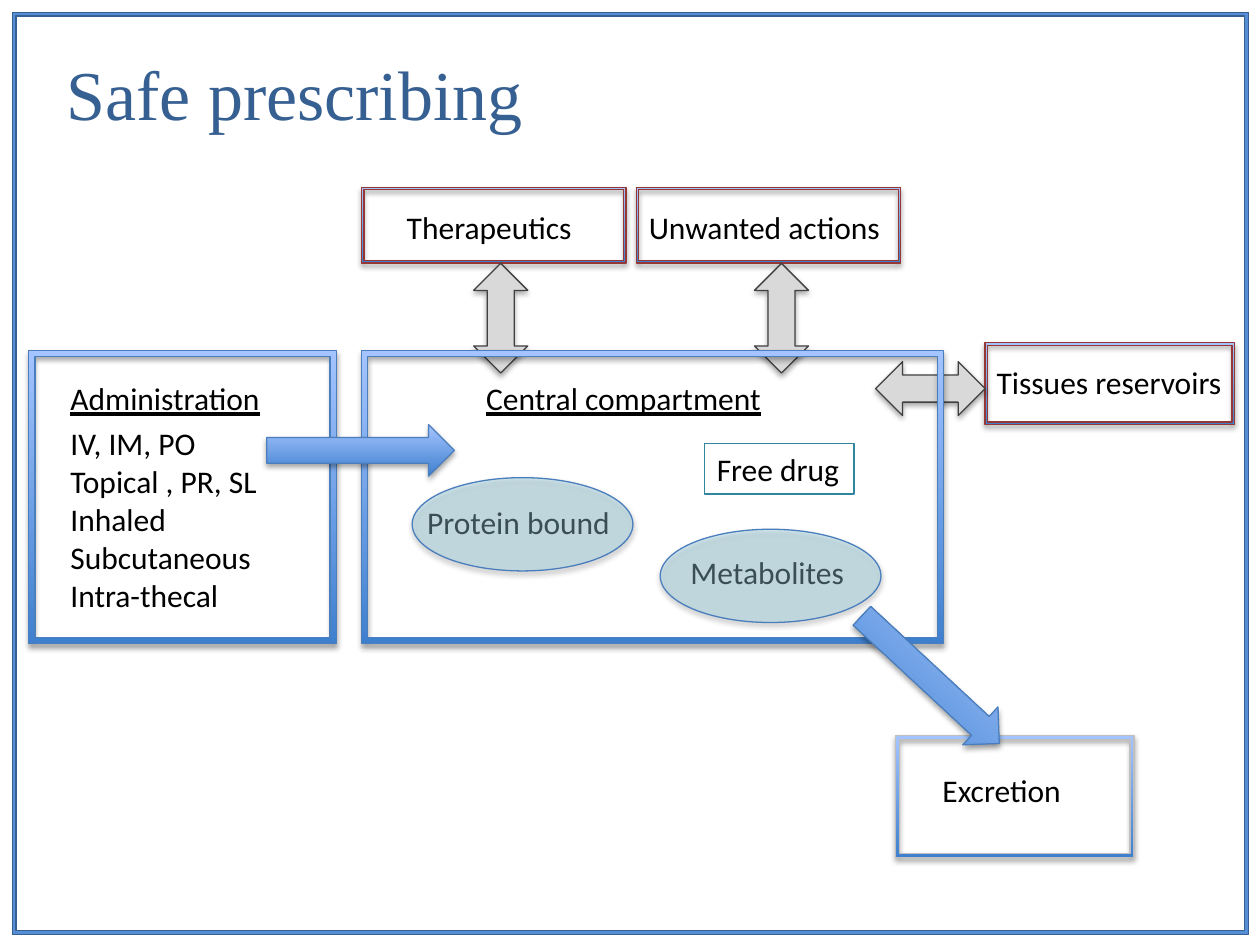
"""Build the Safe prescribing slide: drug administration, compartments and excretion."""
from lxml import etree
from pptx import Presentation
from pptx import util as u
from pptx.dml import color
from pptx.enum import shapes, text
from pptx.oxml import ns

KIND = shapes.MSO_SHAPE
BLUE, RED, GREY, DARK, TEAL = "4B7EBC", "953735", "BFBFBF", "404040", "31859C"
GRADIENT = ("3F80CE", "A4C4FF")
ROUTES = ["IV, IM, PO", "Topical , PR, SL", "Inhaled", "Subcutaneous", "Intra-thecal"]
ROW, ACTION_TOP, ACTION_TEXT, COMPARTMENT_TOP, HEADING_TOP = 1.02, 3.78, 4.06, 7.06, 7.52
ACTION_SIZE, COMPARTMENT_HEIGHT = (5.33, 1.52), 5.92
DOUBLE_SIZE, FLOW_SIZE, OVAL_SIZE = (1.09, 2.21), (3.78, 1.04), (4.45, 1.88)

ADMINISTRATION = [
    ("text", (1.17, HEADING_TOP, 4.39, ROW), ["Administration"], dict(underline=True)),
    ("text", (1.17, 8.43, 4.39, 4.11), ROUTES, {}),
    ("frame", (0.58, COMPARTMENT_TOP, 6.2, COMPARTMENT_HEIGHT), 0.021, BLUE),
]
ACTIONS = [
    ("text", (19.84, 7.19, 5.11, ROW), ["Tissues reservoirs"], {}),
    ("text", (12.83, ACTION_TEXT, 5.26, ROW), ["Unwanted actions"], {}),
    ("text", (7.95, ACTION_TEXT, 3.89, ROW), ["Therapeutics"], {}),
    ("frame", (7.29, ACTION_TOP, *ACTION_SIZE), 0.032, RED),
    ("frame", (12.83, ACTION_TOP, *ACTION_SIZE), 0.032, RED),
    ("frame", (19.86, 6.91, 5.03, 1.65), 0.032, RED),
    ("double", (18.21, 6.73), 90),
    ("double", (9.55, 5.31), 0),
    ("double", (15.21, 5.31), 0),
]
CENTRAL = [
    ("text", (8.36, 10.01, 4.24, ROW), ["Protein bound"], {}),
    ("text", (13.67, 11.02, 3.66, ROW), ["Metabolites"], {}),
    ("frame", (7.29, COMPARTMENT_TOP, 11.73, COMPARTMENT_HEIGHT), 0.021, BLUE),
    ("text", (9.55, HEADING_TOP, 6.15, ROW), ["Central compartment"], dict(underline=True)),
    ("text", (14.2, 8.94, 3.02, ROW), ["Free drug"], dict(outline=TEAL)),
    ("oval", (8.31, 9.63)),
    ("oval", (13.31, 10.67)),
    ("flow", (5.38, 8.56), 0),
]
EXCRETION = [
    ("text", (18.75, 15.42, 2.95, ROW), ["Excretion"], {}),
    ("frame", (18.06, 14.83, 4.8, 2.46), 0.032, GREY),
    ("flow", (16.87, 13.18), 42.9),
]


def rgb(value):
    return color.RGBColor.from_string(value)


def add_shadow(shape):
    effects = etree.SubElement(shape._element.spPr, ns.qn("a:effectLst"))
    shadow = etree.SubElement(effects, ns.qn("a:outerShdw"), blurRad="40000",
                              dist="23000", dir="5400000", rotWithShape="0")
    black = etree.SubElement(shadow, ns.qn("a:srgbClr"), val="000000")
    etree.SubElement(black, ns.qn("a:alpha"), val="35000")


def add_figure(page, kind, place, fill=None, line=BLUE, alpha=None, shadow=True,
               turn=0, thickness=None):
    shape = page.shapes.add_shape(kind, *map(u.Cm, place))
    shape.rotation = turn
    if thickness is not None:
        shape.adjustments[0] = thickness
    if fill is None:
        shape.fill.background()
    elif fill is GRADIENT:
        shape.fill.gradient()
        shape.fill.gradient_angle = 90
        for stop, shade, position in zip(shape.fill.gradient_stops, fill, (0, 1)):
            stop.color.rgb = rgb(shade)
            stop.position = position
    else:
        shape.fill.solid()
        shape.fill.fore_color.rgb = rgb(fill)
    if alpha is not None:
        shade = shape._element.spPr.find(".//" + ns.qn("a:srgbClr"))
        etree.SubElement(shade, ns.qn("a:alpha"), val=str(alpha * 1000))
    shape.line.color.rgb = rgb(line)
    shape.line.width = u.Pt(0.75)
    if shadow:
        add_shadow(shape)
    else:
        shape.shadow.inherit = False
    return shape


def add_text(page, place, lines, size=18, font="Calibri", ink="000000", underline=None,
             outline=None, wrap=False, anchor=text.MSO_ANCHOR.TOP):
    if outline:
        box = add_figure(page, KIND.RECTANGLE, place, line=outline, shadow=False)
    else:
        box = page.shapes.add_textbox(*map(u.Cm, place))
    frame = box.text_frame
    frame.word_wrap = wrap
    frame.vertical_anchor = anchor
    frame.auto_size = text.MSO_AUTO_SIZE.NONE if wrap else text.MSO_AUTO_SIZE.SHAPE_TO_FIT_TEXT
    for index, words in enumerate(lines):
        para = frame.add_paragraph() if index else frame.paragraphs[0]
        para.alignment = text.PP_ALIGN.LEFT
        span = para.add_run()
        span.text = words
        span.font.size = u.Pt(size)
        span.font.name = font
        span.font.underline = underline
        span.font.color.rgb = rgb(ink)


def add_part(page, role, place, *details):
    if role == "text":
        lines, style = details
        add_text(page, place, lines, **style)
    elif role == "frame":
        thickness, line = details
        add_figure(page, KIND.FRAME, place, GRADIENT, line, thickness=thickness)
    elif role == "double":
        add_figure(page, KIND.UP_DOWN_ARROW, place + DOUBLE_SIZE, "D9D9D9", DARK, turn=details[0])
    elif role == "flow":
        add_figure(page, KIND.RIGHT_ARROW, place + FLOW_SIZE, GRADIENT, turn=details[0])
    else:
        add_figure(page, KIND.OVAL, place + OVAL_SIZE, "93CDDD", alpha=39)


def main():
    deck = Presentation()
    deck.slide_width, deck.slide_height = u.Cm(25.4), u.Cm(19.05)
    page = deck.slides.add_slide(deck.slide_layouts[6])
    for part in ADMINISTRATION + ACTIONS + CENTRAL + EXCRETION:
        add_part(page, *part)
    add_figure(page, KIND.FRAME, (0.25, 0.25, 24.92, 18.59), "558ED5", "376092",
               shadow=False, thickness=0.004)
    add_text(page, (1.09, 0.28, 22.86, 3.18), ["Safe prescribing"], size=40,
             font="Times New Roman", ink="376092", wrap=True, anchor=text.MSO_ANCHOR.MIDDLE)
    deck.save("out.pptx")


if __name__ == "__main__":
    main()
